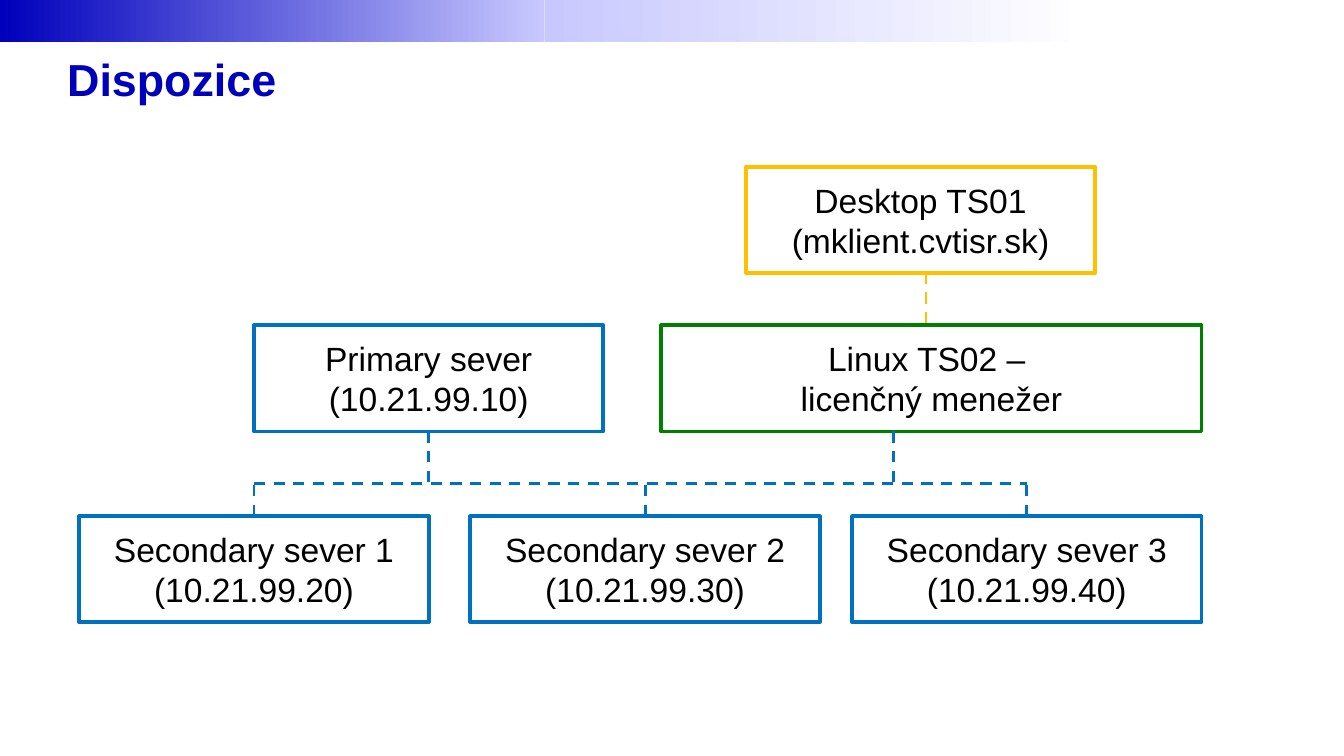
from pptx import Presentation
from pptx.dml.color import RGBColor
from pptx.enum.dml import MSO_LINE
from pptx.enum.shapes import MSO_CONNECTOR, MSO_SHAPE
from pptx.enum.text import MSO_ANCHOR, PP_ALIGN
from pptx.oxml.ns import qn
from pptx.util import Inches, Pt
from lxml import etree

RECTANGLE = MSO_SHAPE.RECTANGLE
STRAIGHT = MSO_CONNECTOR.STRAIGHT
DASH = MSO_LINE.DASH
MIDDLE = MSO_ANCHOR.MIDDLE
CENTER = PP_ALIGN.CENTER

THEME = {
    "font": "Arial", "title_size": 24, "box_size": 18,
    "box_line": 2, "link_line": 1.5,
    "navy": "0000BC", "lavender": "C8C8FF", "white": "FFFFFF", "black": "000000",
    "blue": "0070C0", "green": "008000", "yellow": "FFC000",
}

# Content: left, width, outline, fill, text lines
TITLE = "Dispozice"
BOX_WIDTH, BOX_HEIGHT = 2.6, 0.79
CLIENT_TOP, SERVER_TOP, SECONDARY_TOP = 1.24, 2.42, 3.84
CLIENT = (5.55, BOX_WIDTH, "yellow", "white", ["Desktop TS01", "(mklient.cvtisr.sk)"])
PRIMARY = (1.89, BOX_WIDTH, "blue", None, ["Primary sever", "(10.21.99.10)"])
LICENCE = (4.92, 4.02, "green", "white", ["Linux TS02 – ", "licenčný menežer"])
SECONDARIES = [
    (left, BOX_WIDTH, "blue", None,
     [f"Secondary sever {number}", f"(10.21.99.{number + 1}0)"])
    for number, left in enumerate((0.59, 3.5, 6.34), start=1)
]
ROWS = [(SERVER_TOP, [PRIMARY]), (SECONDARY_TOP, SECONDARIES),
        (CLIENT_TOP, [CLIENT]), (SERVER_TOP, [LICENCE])]

# Links and header band
BUS_Y = 3.6
LICENCE_LINK_X, CLIENT_LINK_X = 6.65, 6.89
BAND_TOP, BAND_WIDTH, BAND_HEIGHT = -0.11, 4.05, 0.42


def color(name):
    return RGBColor.from_string(THEME[name])


def add_run(paragraph, text, size, color_name, bold=False):
    run = paragraph.add_run()
    run.text = text
    run.font.name = THEME["font"]
    run.font.size = Pt(size)
    run.font.bold = bold
    run.font.color.rgb = color(color_name)


def add_rectangle(slide, left, top, width, height):
    shape = slide.shapes.add_shape(
        RECTANGLE, Inches(left), Inches(top), Inches(width), Inches(height))
    shape.shadow.inherit = False
    return shape


def add_band(slide, left, start, end):
    shape = add_rectangle(slide, left, BAND_TOP, BAND_WIDTH, BAND_HEIGHT)
    shape.line.fill.background()
    shape.fill.gradient()
    shape.fill.gradient_angle = 0
    for stop, name in zip(shape.fill.gradient_stops, (start, end)):
        stop.color.rgb = color(name)


def add_title(slide):
    box = slide.shapes.add_textbox(Inches(0.42), Inches(0.39), Inches(1.72), Inches(0.44))
    frame = box.text_frame
    frame.word_wrap = False
    frame.margin_left = frame.margin_right = Inches(0.08)
    frame.margin_top = frame.margin_bottom = Inches(0.04)
    paragraph = frame.paragraphs[0]
    paragraph.line_spacing = 0.9
    add_run(paragraph, TITLE, THEME["title_size"], "navy", bold=True)


def add_box(slide, top, left, width, outline, fill, lines):
    shape = add_rectangle(slide, left, top, width, BOX_HEIGHT)
    if fill:
        shape.fill.solid()
        shape.fill.fore_color.rgb = color(fill)
    else:
        shape.fill.background()
    shape.line.color.rgb = color(outline)
    shape.line.width = Pt(THEME["box_line"])
    frame = shape.text_frame
    frame.word_wrap = True
    frame.vertical_anchor = MIDDLE
    for index, line in enumerate(lines):
        paragraph = frame.add_paragraph() if index else frame.paragraphs[0]
        paragraph.alignment = CENTER
        add_run(paragraph, line, THEME["box_size"], "black")


def add_link(slide, x1, y1, x2, y2, color_name="blue"):
    link = slide.shapes.add_connector(
        STRAIGHT, Inches(x1), Inches(y1), Inches(x2), Inches(y2))
    link.line.color.rgb = color(color_name)
    link.line.width = Pt(THEME["link_line"])
    link.line.dash_style = DASH
    etree.SubElement(link._element.spPr, qn("a:effectLst"))


def center_x(box):
    return box[0] + box[1] / 2


def main():
    # Widescreen page, 16:9
    presentation = Presentation()
    presentation.slide_width = Inches(10)
    presentation.slide_height = Inches(10 * 9 / 16)
    slide = presentation.slides.add_slide(presentation.slide_layouts[6])

    # Header band and title
    add_band(slide, 0, "navy", "lavender")
    add_band(slide, BAND_WIDTH, "lavender", "white")
    add_title(slide)

    # Machines
    for top, boxes in ROWS:
        for box in boxes:
            add_box(slide, top, *box)

    # Shared bus with its branches
    branches = [center_x(box) for box in SECONDARIES]
    for x in branches:
        add_link(slide, x, SECONDARY_TOP, x, BUS_Y)
    add_link(slide, branches[0], BUS_Y, branches[-1], BUS_Y)
    for x in (center_x(PRIMARY), LICENCE_LINK_X):
        add_link(slide, x, SERVER_TOP + BOX_HEIGHT, x, BUS_Y)

    # Client link
    add_link(slide, CLIENT_LINK_X, CLIENT_TOP + BOX_HEIGHT, CLIENT_LINK_X, SERVER_TOP, "yellow")

    presentation.save("out.pptx")


if __name__ == "__main__":
    main()
